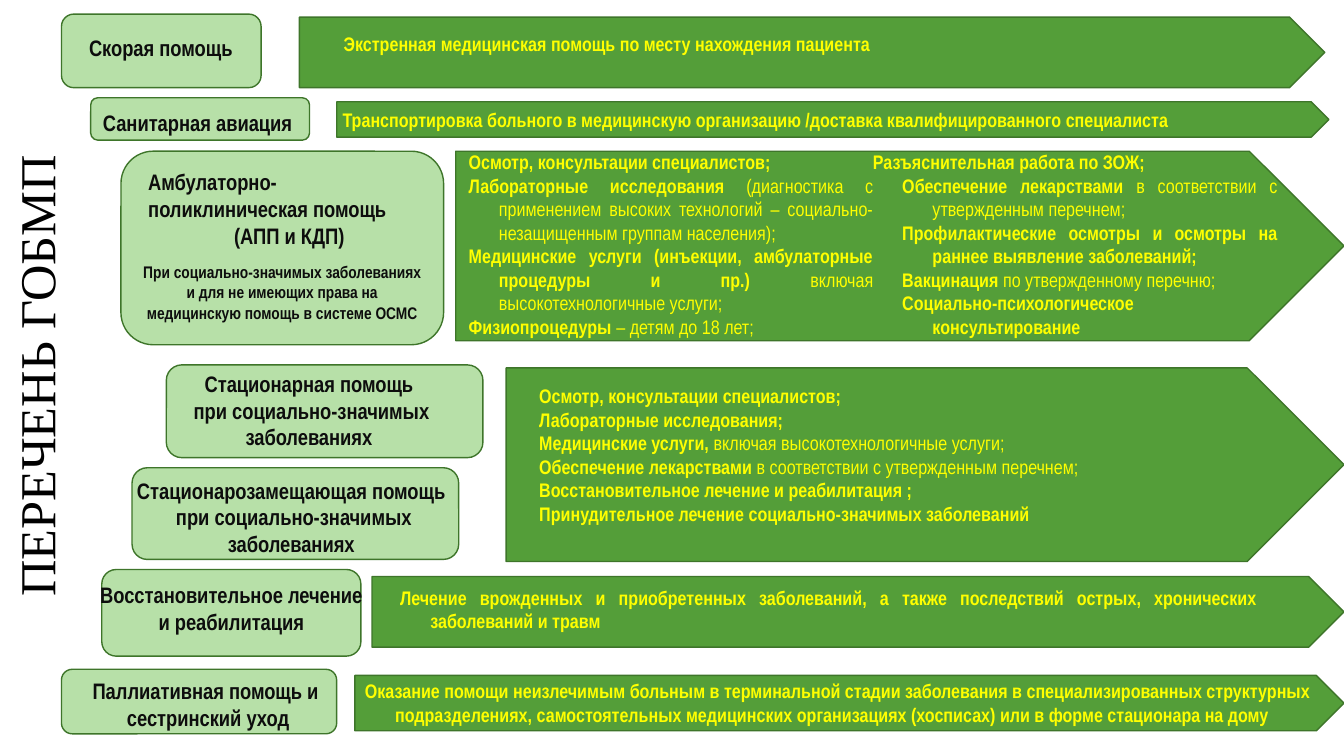
from dataclasses import dataclass

from pptx import Presentation
from pptx.dml.color import RGBColor
from pptx.enum.shapes import MSO_SHAPE
from pptx.enum.text import MSO_AUTO_SIZE, PP_ALIGN
from pptx.util import Inches, Pt


@dataclass(frozen=True)
class Theme:
    arrow_fill: str = "549E39"
    label_fill: str = "B7E0A8"
    outline: str = "3E752A"
    label_text: str = "0D0D0D"
    arrow_text: str = "FFFF00"
    title_text: str = "000000"
    body_font: str = "Arial Narrow"
    title_font: str = "Times New Roman"
    title_size: int = 36
    label_size: int = 16
    body_size: int = 14
    note_size: int = 12


@dataclass(frozen=True)
class Line:
    """One paragraph: a bold part, then a regular part."""
    bold: str
    regular: str = ""
    align: PP_ALIGN = PP_ALIGN.LEFT
    margin: float = 0.3


THEME = Theme()
HANGING = 0.3
CENTER, JUSTIFY = PP_ALIGN.CENTER, PP_ALIGN.JUSTIFY


def add_panel(slide, kind, box, fill):
    shape = slide.shapes.add_shape(kind, *map(Inches, box))
    shape.shadow.inherit = False
    shape.fill.solid()
    shape.fill.fore_color.rgb = RGBColor.from_string(fill)
    shape.line.color.rgb = RGBColor.from_string(THEME.outline)
    shape.line.width = Pt(1)


def add_text(slide, box, lines, *, size=THEME.body_size, color=THEME.arrow_text,
             font=THEME.body_font, inset=0.1, direction=None):
    frame = slide.shapes.add_textbox(*map(Inches, box)).text_frame
    frame.word_wrap = True
    frame.auto_size = MSO_AUTO_SIZE.SHAPE_TO_FIT_TEXT
    frame.margin_left = frame.margin_right = Inches(inset)
    frame.margin_top = frame.margin_bottom = Inches(0.05)
    if direction:
        frame._txBody.bodyPr.set("vert", direction)
    for index, line in enumerate(lines):
        paragraph = frame.add_paragraph() if index else frame.paragraphs[0]
        paragraph.alignment = line.align
        if line.margin:
            properties = paragraph._p.get_or_add_pPr()
            properties.set("marL", str(Inches(line.margin)))
            properties.set("indent", str(-Inches(HANGING)))
        for text, bold in ((line.bold, True), (line.regular, False)):
            if text:
                run = paragraph.add_run()
                run.text = text
                run.font.name = font
                run.font.size = Pt(size)
                run.font.bold = bold
                run.font.color.rgb = RGBColor.from_string(color)


def add_arrow(slide, arrow_box, *texts):
    add_panel(slide, MSO_SHAPE.PENTAGON, arrow_box, THEME.arrow_fill)
    for text_box, lines in texts:
        add_text(slide, text_box, lines)


def add_label(slide, label_box, text_box, *texts, first_align=CENTER):
    add_panel(slide, MSO_SHAPE.ROUNDED_RECTANGLE, label_box, THEME.label_fill)
    lines = [Line(text, align=CENTER if index else first_align, margin=0)
             for index, text in enumerate(texts)]
    add_text(slide, text_box, lines, size=THEME.label_size,
             color=THEME.label_text, inset=0.09)


def add_arrows(slide):
    # Emergency care and air ambulance
    add_arrow(slide, (2.97, 0.17, 10.17, 0.7), ((3.31, 0.27, 5.51, 0.33), [
        Line("Экстренная медицинская помощь по месту нахождения пациента")]))
    add_arrow(slide, (3.34, 1.01, 9.84, 0.35), ((3.3, 1.02, 9.82, 0.33), [
        Line("Транспортировка больного в медицинскую организацию "
             "/доставка квалифицированного специалиста", align=JUSTIFY)]))

    # Outpatient care, in two columns
    outpatient_left = [
        Line("Осмотр, консультации специалистов;"),
        Line("Лабораторные исследования ",
             "(диагностика с применением высоких технологий – "
             "социально-незащищенным группам населения);", JUSTIFY),
        Line("Медицинские услуги (инъекции, амбулаторные процедуры и пр.) ",
             "включая высокотехнологичные услуги;", JUSTIFY),
        Line("Физиопроцедуры ", "– детям до 18 лет;", JUSTIFY),
    ]
    outpatient_right = [
        Line("Разъяснительная работа по ЗОЖ;", align=JUSTIFY),
        Line("Обеспечение лекарствами ", "в соответствии с утвержденным перечнем;",
             JUSTIFY, 0.59),
        Line("Профилактические осмотры и осмотры на раннее выявление заболеваний;",
             "", JUSTIFY, 0.59),
        Line("Вакцинация ", "по утвержденному перечню;", JUSTIFY, 0.59),
        Line("Социально-психологическое консультирование", margin=0.59),
    ]
    add_arrow(slide, (4.52, 1.5, 8.81, 1.88),
              ((4.55, 1.44, 4.21, 1.97), outpatient_left),
              ((8.56, 1.44, 4.21, 1.97), outpatient_right))

    # Inpatient care
    add_arrow(slide, (5.02, 3.65, 8.31, 1.92), ((5.25, 3.76, 7.33, 1.51), [
        Line("Осмотр, консультации специалистов;"),
        Line("Лабораторные исследования;"),
        Line("Медицинские услуги, ", "включая высокотехнологичные услуги;"),
        Line("Обеспечение лекарствами ", "в соответствии с утвержденным перечнем;"),
        Line("Восстановительное лечение и реабилитация ;"),
        Line("Принудительное лечение социально-значимых заболеваний"),
    ]))

    # Rehabilitation and palliative care
    add_arrow(slide, (3.69, 5.72, 9.64, 0.7), ((3.87, 5.76, 8.7, 0.57), [
        Line("Лечение врожденных и приобретенных заболеваний, а также последствий "
             "острых, хронических заболеваний и травм", align=JUSTIFY)]))
    add_arrow(slide, (3.52, 6.7, 9.81, 0.55), ((3.52, 6.69, 9.62, 0.57), [
        Line("Оказание помощи неизлечимым больным в терминальной стадии заболевания "
             "в специализированных структурных подразделениях, самостоятельных "
             "медицинских организациях (хосписах) или в форме стационара на дому")]))


def add_labels(slide):
    add_label(slide, (0.61, 0.14, 1.98, 0.73), (0.7, 0.29, 1.79, 0.36),
              "Скорая помощь")
    add_label(slide, (0.9, 0.97, 2.17, 0.42), (0.92, 1.03, 2.08, 0.36),
              "Санитарная авиация")
    add_label(slide, (1.2, 1.5, 3.2, 1.92), (1.38, 1.62, 2.98, 0.9),
              "Амбулаторно-поликлиническая помощь", "(АПП и КДП)",
              first_align=PP_ALIGN.LEFT)
    add_text(slide, (1.31, 2.55, 2.98, 0.7), [
        Line("При социально-значимых заболеваниях и для не имеющих права на "
             "медицинскую помощь в системе ОСМС", align=CENTER, margin=0)],
        size=THEME.note_size, color=THEME.label_text)
    add_label(slide, (1.65, 3.62, 3.14, 0.92), (1.75, 3.62, 2.68, 0.9),
              "Стационарная помощь ", "при социально-значимых заболеваниях ")
    add_label(slide, (1.31, 4.64, 3.24, 0.91), (1.21, 4.68, 3.41, 0.9),
              "Стационарозамещающая помощь ", "при социально-значимых заболеваниях ")
    add_label(slide, (1.01, 5.65, 2.57, 0.86), (0.9, 5.72, 2.79, 0.63),
              "Восстановительное лечение и реабилитация")
    add_label(slide, (0.61, 6.64, 2.73, 0.64), (0.7, 6.67, 2.73, 0.63),
              "Паллиативная помощь и ", "сестринский уход")


def main():
    presentation = Presentation()
    presentation.slide_width = Inches(13.33)
    presentation.slide_height = Inches(7.5)
    slide = presentation.slides.add_slide(presentation.slide_layouts[6])

    # Vertical title
    add_text(slide, (0, 0.45, 0.81, 6.56),
             [Line("", "ПЕРЕЧЕНЬ ГОБМП", CENTER, 0)], size=THEME.title_size,
             color=THEME.title_text, font=THEME.title_font, direction="vert270")

    # Care types and what each one covers
    add_arrows(slide)
    add_labels(slide)
    presentation.save("out.pptx")


if __name__ == "__main__":
    main()
